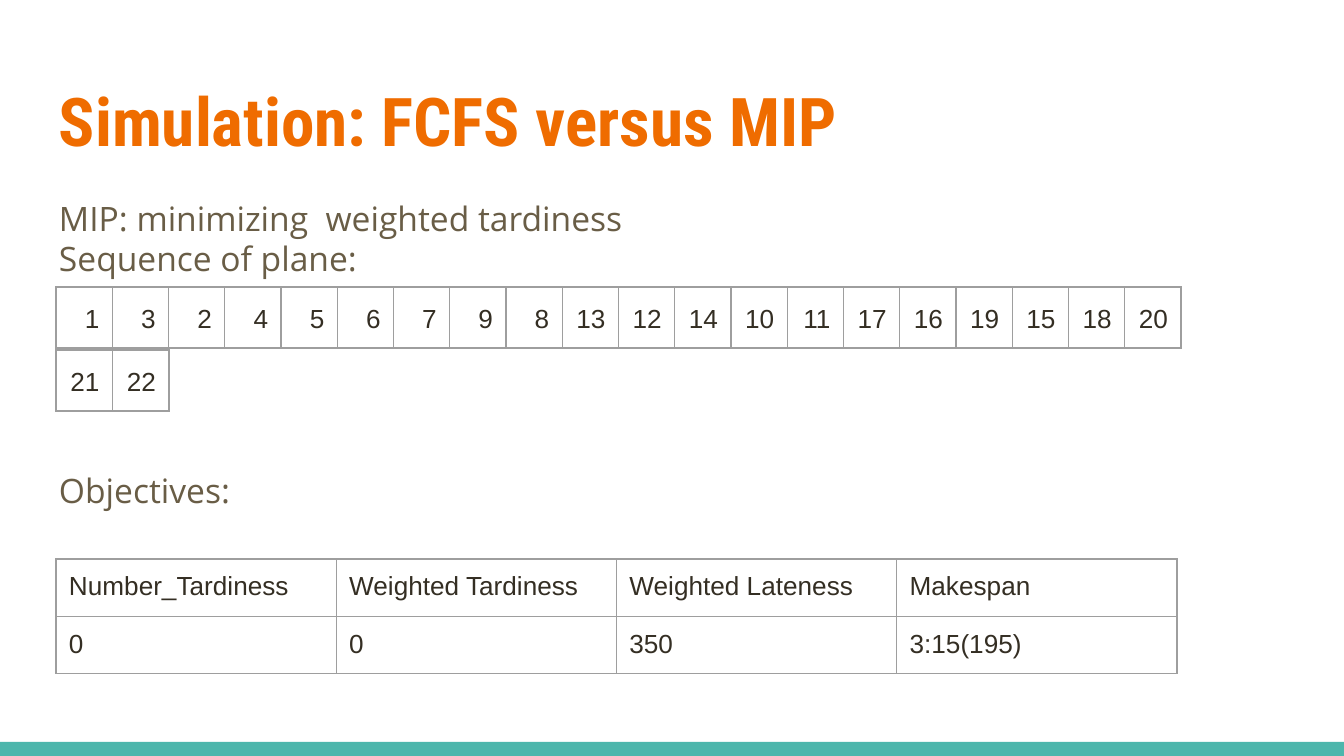
"""Build the slide comparing FCFS with MIP for weighted tardiness."""
from dataclasses import dataclass

from pptx import Presentation
from pptx.dml.color import RGBColor as RGB
from pptx.enum.shapes import MSO_SHAPE as SHAPE
from pptx.enum.text import MSO_ANCHOR as ANCHOR, MSO_AUTO_SIZE as AUTO, PP_ALIGN as ALIGN
from pptx.oxml import parse_xml
from pptx.oxml.ns import nsdecls
from pptx.util import Pt

SCALE = 914400 / 134.4


@dataclass(frozen=True)
class Theme:
    title: tuple = ("Roboto Condensed", 36, "EF6C00", True)
    body: tuple = ("Open Sans", 18, "695D46", False)
    cell: tuple = ("Arial", 14, "342E23", False)
    bar: str = "4DB6AC"
    border: str = "9E9E9E"
    border_pt: float = 0.75


def px(*lengths):
    return [round(n * SCALE) for n in lengths]


def format_text(tf, style, align=ALIGN.LEFT, spacing=1.0):
    name, size, color, bold = style
    for p in tf.paragraphs:
        p.alignment = align
        p.line_spacing = spacing
        p.space_before = p.space_after = Pt(0)
        for r in p.runs:
            r.font.name = name
            r.font.size = Pt(size)
            r.font.bold = bold
            r.font.color.rgb = RGB.from_string(color)


theme = Theme()
prs = Presentation()
prs.slide_width, prs.slide_height = px(1344, 756)
s = prs.slides.add_slide(prs.slide_layouts[1])

bar = s.shapes.add_shape(SHAPE.RECTANGLE, *px(0, 742, 1344, 14))
bar.shadow.inherit = False
bar.fill.solid()
bar.fill.fore_color.rgb = RGB.from_string(theme.bar)
bar.line.fill.background()

title, body = s.shapes.title, s.placeholders[1]
lines = ["MIP: minimizing  weighted tardiness", "Sequence of plane:", "Objectives:"]
for sp, box, text, style in (
    (title, (46, 66, 1252, 103), "Simulation: FCFS versus MIP", theme.title),
    (body, (46, 185, 1252, 485), "\n".join(lines), theme.body),
):
    sp.left, sp.top, sp.width, sp.height = px(*box)
    tf = sp.text_frame
    tf.text = text
    tf.word_wrap = True
    tf.auto_size = AUTO.NONE
    tf.vertical_anchor = ANCHOR.TOP
    tf.margin_left, tf.margin_top, tf.margin_right, tf.margin_bottom = px(13, 13, 13, 13)
    format_text(tf, style)

for p in body.text_frame.paragraphs:
    pPr = p._p.get_or_add_pPr()
    pPr.set("marL", "0")
    pPr.set("indent", "0")
    pPr.append(parse_xml(f"<a:buNone {nsdecls('a')}/>"))
objectives = body.text_frame.paragraphs[-1]
objectives.line_spacing = 1.15
objectives.space_before = Pt(99.5)

sequence = [1, 3, 2, 4, 5, 6, 7, 9, 8, 13, 12, 14, 10, 11, 17, 16, 19, 15, 18, 20]
results = [
    ["Number_Tardiness", "Weighted Tardiness", "Weighted Lateness", "Makespan"],
    ["0", "0", "350", "3:15(195)"],
]
tables = (
    ((56, 287, 1125, 61), [sequence], ALIGN.RIGHT, 1.15),
    ((56, 350, 113, 61), [[21, 22]], ALIGN.RIGHT, 1.15),
    ((56, 559, 1121, 115), results, ALIGN.LEFT, 1.0),
)
for box, rows, align, spacing in tables:
    table = s.shapes.add_table(len(rows), len(rows[0]), *px(*box)).table
    table.first_row = table.horz_banding = False
    for i, row in enumerate(rows):
        for j, value in enumerate(row):
            cell = table.cell(i, j)
            cell.text_frame.text = str(value)
            format_text(cell.text_frame, theme.cell, align, spacing)
            cell.margin_left, cell.margin_top, cell.margin_right, cell.margin_bottom = px(13, 13, 13, 13)
            tcPr = cell._tc.get_or_add_tcPr()
            for side in ("lnL", "lnR", "lnT", "lnB"):
                tcPr.append(parse_xml(
                    f'<a:{side} {nsdecls("a")} w="{Pt(theme.border_pt)}"><a:solidFill>'
                    f'<a:srgbClr val="{theme.border}"/></a:solidFill></a:{side}>'))
            cell.fill.background()

prs.save("out.pptx")
